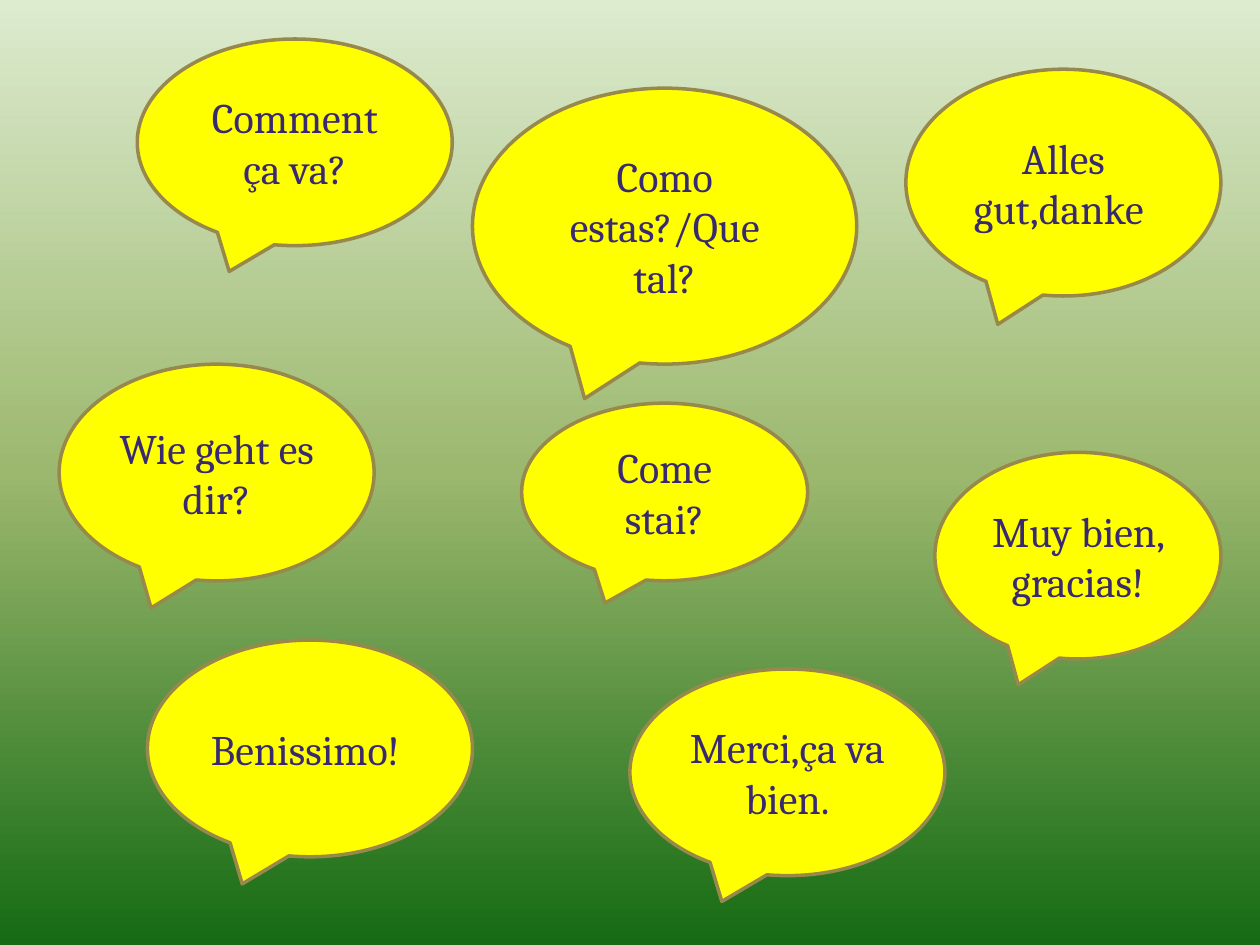
"""Build a slide of greeting speech bubbles in several languages."""
from copy import deepcopy

from pptx import Presentation
from pptx import util as u
from pptx.dml.color import RGBColor
from pptx.enum import shapes, text
from pptx.oxml.ns import qn

COLORS = {
    "bubble": "FFFF00", "outline": "98894B", "text": "382971",
    "top": "DDEBCF", "middle": "9CB86E", "bottom": "156B13",
}
BUBBLES = [
    ("Comment ça va?", 1.09, 0.31, 2.5, 1.64),
    ("Come stai?", 4.14, 3.2, 2.27, 1.41),
    ("Muy bien, gracias!", 7.42, 3.59, 2.27, 1.64),
    ("Benissimo! ", 1.17, 5.08, 2.58, 1.72),
    ("Alles gut,danke ", 7.19, 0.55, 2.5, 1.8),
    ("Como estas?/Que tal?", 3.75, 0.7, 3.05, 2.19),
    ("Wie geht es dir?", 0.47, 2.89, 2.5, 1.72),
    ("Merci,ça va bien.", 5, 5.31, 2.5, 1.64),
]


def rgb(name):
    return RGBColor.from_string(COLORS[name])


prs = Presentation()
prs.slide_width, prs.slide_height = u.Inches(10), u.Inches(7.5)
s = prs.slides.add_slide(prs.slide_layouts[6])

fill = s.background.fill
fill.gradient()
fill.gradient_angle = 270
stops = s.element.find(".//" + qn("a:gsLst"))
stops.insert(1, deepcopy(stops[0]))
for stop, name, position in zip(fill.gradient_stops, ("top", "middle", "bottom"), (0, 0.5, 1)):
    stop.color.rgb = rgb(name)
    stop.position = position

for words, *box in BUBBLES:
    sp = s.shapes.add_shape(shapes.MSO_SHAPE.OVAL_CALLOUT, *map(u.Inches, box))
    sp.shadow.inherit = False
    sp.fill.solid()
    sp.fill.fore_color.rgb = rgb("bubble")
    sp.line.color.rgb = rgb("outline")
    sp.line.width = u.Pt(2)
    tf = sp.text_frame
    tf.word_wrap = True
    tf.vertical_anchor = text.MSO_ANCHOR.MIDDLE
    p = tf.paragraphs[0]
    p.text = words
    p.alignment = text.PP_ALIGN.CENTER
    p.font.name = "Cambria"
    p.font.size = u.Pt(24)
    p.font.color.rgb = rgb("text")

prs.save("out.pptx")
